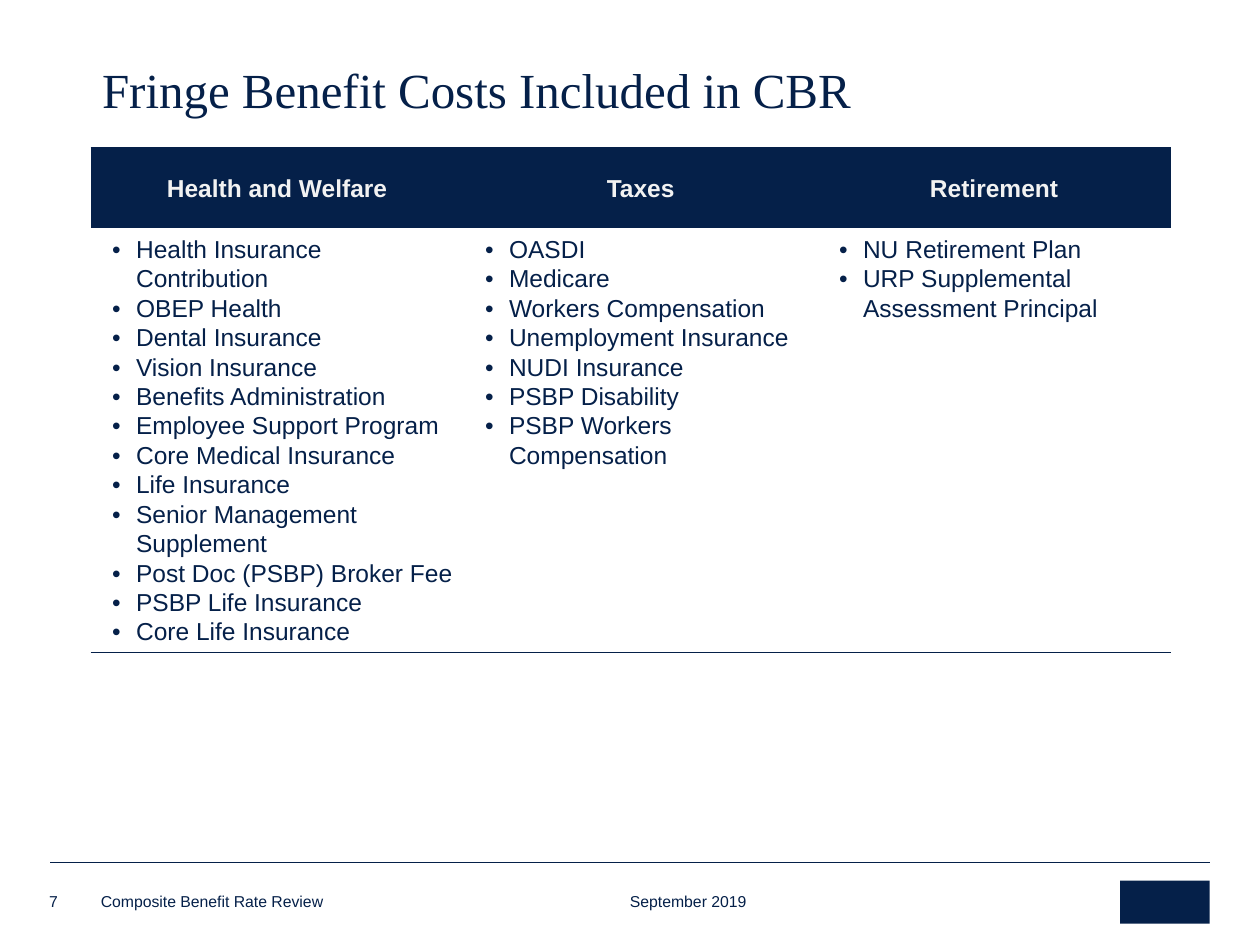
import pptx
import pptx.dml.color
import pptx.enum.shapes
import pptx.enum.text
import pptx.oxml
import pptx.oxml.ns
import pptx.util
from pptx.util import Inches

COLORS = {"navy": "052049", "header_text": "F2F2F2"}
DRAWING = pptx.oxml.ns.nsdecls("a")
NO_STYLE_NO_GRID = "{2D5ABB26-0587-4C30-8999-92F81FD0307C}"
ANCHOR = pptx.enum.text.MSO_ANCHOR
ALIGN = pptx.enum.text.PP_ALIGN

BENEFITS = {
    "Health and Welfare": [
        "Health Insurance Contribution", "OBEP Health", "Dental Insurance",
        "Vision Insurance", "Benefits Administration",
        "Employee Support Program", "Core Medical Insurance",
        "Life Insurance", "Senior Management Supplement",
        "Post Doc (PSBP) Broker Fee", "PSBP Life Insurance",
        "Core Life Insurance",
    ],
    "Taxes": [
        "OASDI", "Medicare", "Workers Compensation",
        "Unemployment Insurance", "NUDI Insurance", "PSBP Disability",
        "PSBP Workers Compensation",
    ],
    "Retirement": [
        "NU Retirement Plan", "URP Supplemental Assessment Principal",
    ],
}


def rgb(name):
    return pptx.dml.color.RGBColor.from_string(COLORS[name])


def format_text(frame, size, color="navy", font="Arial", bold=False, spacing=None):
    for para in frame.paragraphs:
        if spacing:
            para.line_spacing = spacing
        for span in para.runs:
            span.font.size = pptx.util.Pt(size)
            span.font.name = font
            span.font.bold = bold
            span.font.color.rgb = rgb(color)


deck = pptx.Presentation()
deck.slide_width, deck.slide_height = Inches(10), Inches(7.5)
page = deck.slides.add_slide(deck.slide_layouts[5])

# Footer rule and logo placeholder block
rule = page.shapes.add_connector(
    pptx.enum.shapes.MSO_CONNECTOR.STRAIGHT,
    Inches(0.4), Inches(6.84), Inches(9.6), Inches(6.84))
rule.line.color.rgb = rgb("navy")
rule.line.width = pptx.util.Pt(0.25)
rule._element.spPr.append(pptx.oxml.parse_xml(f"<a:effectLst {DRAWING}/>"))

logo_block = page.shapes.add_shape(
    pptx.enum.shapes.MSO_SHAPE.RECTANGLE,
    Inches(8.89), Inches(6.99), Inches(0.71), Inches(0.34))
logo_block.shadow.inherit = False
logo_block.fill.solid()
logo_block.fill.fore_color.rgb = rgb("navy")
logo_block.line.fill.background()

# Title
title = page.shapes.title
title.left, title.top = Inches(0.71), Inches(0.48)
title.width, title.height = Inches(8.85), Inches(0.51)
title.text_frame.text = "Fringe Benefit Costs Included in CBR"
title.text_frame.vertical_anchor = ANCHOR.BOTTOM
title.text_frame.paragraphs[0].alignment = ALIGN.LEFT
format_text(title.text_frame, 28, font="Times New Roman", spacing=0.85)

# Benefits table: one column per category
table_frame = page.shapes.add_table(
    2, len(BENEFITS), Inches(0.72), Inches(1.17), Inches(8.57), Inches(4))
table = table_frame.table
table.horz_banding = False
table_frame._element.xpath(".//a:tableStyleId")[0].text = NO_STYLE_NO_GRID
table.rows[0].height, table.rows[1].height = Inches(0.64), Inches(3.36)
for column, width in zip(table.columns, (2.96, 2.81, 2.8)):
    column.width = Inches(width)

for index, (category, costs) in enumerate(BENEFITS.items()):
    header, body = table.cell(0, index), table.cell(1, index)
    header.text_frame.text = category
    header.vertical_anchor = ANCHOR.MIDDLE
    header.text_frame.paragraphs[0].alignment = ALIGN.CENTER
    header.fill.solid()
    header.fill.fore_color.rgb = rgb("navy")
    format_text(header.text_frame, 14, "header_text", bold=True, spacing=1.07)

    body.text_frame.text = "\n".join(costs)
    body.fill.background()
    format_text(body.text_frame, 14, spacing=1.07)
    for para in body.text_frame.paragraphs:
        properties = para._p.get_or_add_pPr()
        properties.set("marL", str(Inches(0.31)))
        properties.set("indent", str(Inches(-0.19)))
        properties.append(pptx.oxml.parse_xml(f'<a:buFont {DRAWING} typeface="Arial"/>'))
        properties.append(pptx.oxml.parse_xml(f'<a:buChar {DRAWING} char="•"/>'))

    for cell, edge in ((header, "lnT"), (body, "lnB")):
        cell.margin_left = cell.margin_right = Inches(0.05)
        cell.margin_top = cell.margin_bottom = Inches(0.05)
        cell._tc.get_or_add_tcPr().insert(0, pptx.oxml.parse_xml(
            f'<a:{edge} {DRAWING} w="{pptx.util.Pt(1)}"><a:solidFill>'
            f'<a:srgbClr val="{COLORS["navy"]}"/></a:solidFill></a:{edge}>'))

# Footer: page number, then document name and date
for text, left, top, width, height in (
        ("7", 0.39, 7.06, 0.27, 0.17),
        ("Composite Benefit Rate Review\tSeptember 2019", 0.8, 7.08, 7.74, 0.15)):
    box = page.shapes.add_textbox(
        Inches(left), Inches(top), Inches(width), Inches(height))
    frame = box.text_frame
    frame.word_wrap = True
    frame.vertical_anchor = ANCHOR.BOTTOM
    frame.margin_left = frame.margin_right = 0
    frame.margin_top = frame.margin_bottom = 0
    frame.text = text
    format_text(frame, 9)

# The date sits at a tab stop in the last footer box
frame.paragraphs[0]._p.get_or_add_pPr().append(pptx.oxml.parse_xml(
    f'<a:tabLst {DRAWING}><a:tab pos="{Inches(4.2)}" algn="l"/></a:tabLst>'))

deck.save("out.pptx")
